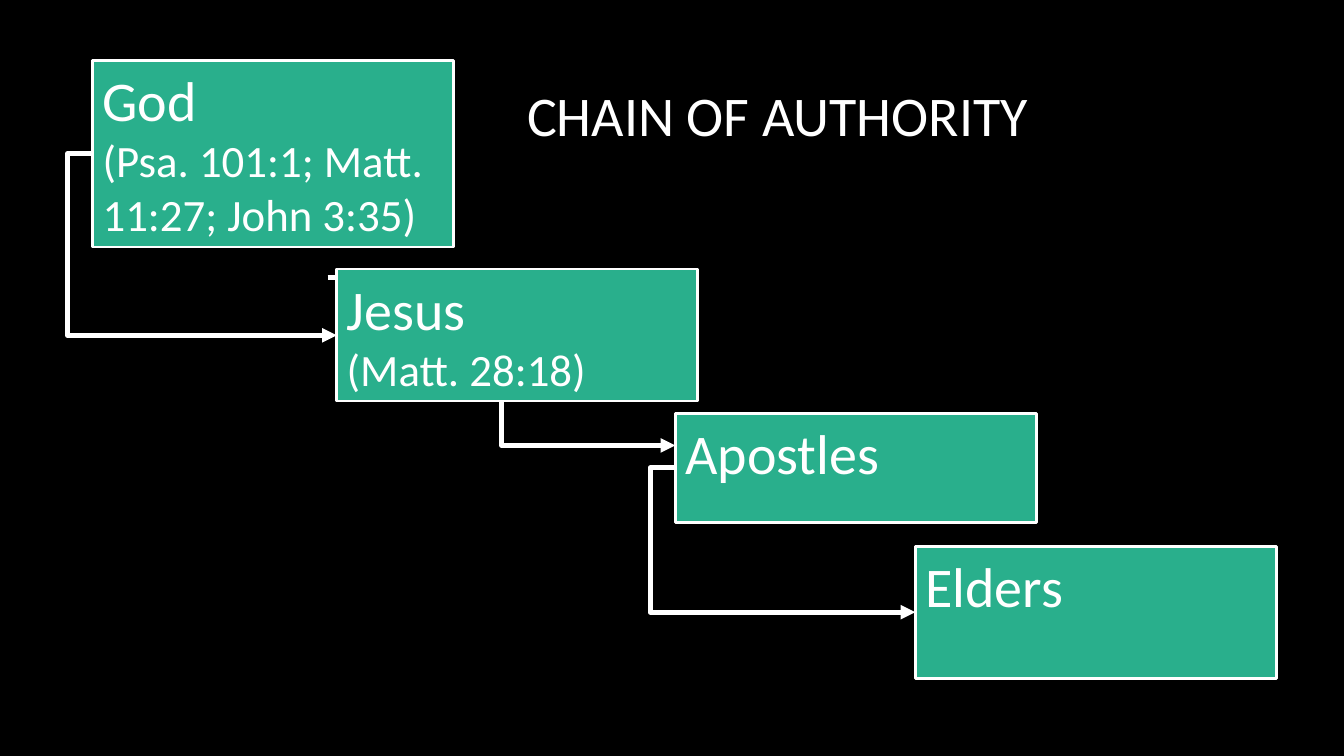
from lxml import etree
from pptx import Presentation
from pptx.dml.color import RGBColor
from pptx.enum.shapes import MSO_CONNECTOR as Connector, MSO_SHAPE as Shape
from pptx.enum.text import MSO_ANCHOR as Anchor, PP_ALIGN as Align
from pptx.oxml.ns import qn
from pptx.util import Pt

COLORS = {"background": "000000", "box": "29AF8C", "white": "FFFFFF"}
FONT = "Calibri"
NAME_SIZE, VERSE_SIZE = 40, 32
BOX_WIDTH = 257.8
BOX_LINE, ARROW_LINE = 2, 3.5

TITLE = ("CHAIN OF AUTHORITY", 369.4, 54, 437.8, 55.4)
# name: (verses, left, top, height)
LINKS = {
    "God": ("(Psa. 101:1; Matt. 11:27; John 3:35)", 66.2, 43.2, 133.2),
    "Apostles": ("", 482.4, 295.2, 77.8),
    "Elders": ("", 653.8, 390.2, 94.3),
    "Jesus": ("(Matt. 28:18)", 240.5, 192.2, 94.3),
}
# (start x, start y, end x, end y, x of the vertical run)
ARROWS = [
    (66.2, 109.7, 240.5, 239.5, 48.2),
    (234, 198, 482.4, 318.2, 358.2),
    (482.4, 334.1, 653.8, 437.3, 464.4),
]


def rgb(name):
    return RGBColor.from_string(COLORS[name])


def write(frame, lines):
    """Fill a frame with (text, size) paragraphs, left and top aligned."""
    settings = {"word_wrap": True, "vertical_anchor": Anchor.TOP}
    for key, value in settings.items():
        setattr(frame, key, value)
    for index, (text, size) in enumerate(lines):
        paragraph = frame.add_paragraph() if index else frame.paragraphs[0]
        paragraph.alignment = Align.LEFT
        run = paragraph.add_run()
        run.text = text
        for key, value in {"name": FONT, "size": Pt(size)}.items():
            setattr(run.font, key, value)
        run.font.color.rgb = rgb("white")


def add_title(slide):
    text, *bounds = TITLE
    box = slide.shapes.add_textbox(*map(Pt, bounds))
    write(box.text_frame, [(text, NAME_SIZE)])


def add_link(slide, name):
    verses, left, top, height = LINKS[name]
    box = slide.shapes.add_shape(
        Shape.RECTANGLE, Pt(left), Pt(top), Pt(BOX_WIDTH), Pt(height))
    box.shadow.inherit = False
    box.fill.solid()
    box.fill.fore_color.rgb = rgb("box")
    box.line.color.rgb = rgb("white")
    box.line.width = Pt(BOX_LINE)
    lines = [(name, NAME_SIZE), (verses, VERSE_SIZE)]
    write(box.text_frame, [line for line in lines if line[0]])


def add_arrow(slide, x1, y1, x2, y2, turn_x):
    """Draw an elbow arrow whose vertical run lies at turn_x."""
    arrow = slide.shapes.add_connector(
        Connector.ELBOW, Pt(x1), Pt(y1), Pt(x2), Pt(y2))
    arrow.line.color.rgb = rgb("white")
    arrow.line.width = Pt(ARROW_LINE)
    properties = arrow._element.spPr
    bend = round((turn_x - x1) / (x2 - x1) * 100000)
    etree.SubElement(properties.find(".//" + qn("a:avLst")), qn("a:gd"),
                     name="adj1", fmla=f"val {bend}")
    etree.SubElement(properties.find(qn("a:ln")), qn("a:tailEnd"),
                     type="triangle")
    etree.SubElement(properties, qn("a:effectLst"))


def main():
    deck = Presentation()
    deck.slide_width, deck.slide_height = Pt(960), Pt(540)
    slide = deck.slides.add_slide(deck.slide_layouts[6])
    slide.background.fill.solid()
    slide.background.fill.fore_color.rgb = rgb("background")

    add_title(slide)
    for name in ("God", "Apostles", "Elders"):
        add_link(slide, name)
    for arrow in ARROWS:
        add_arrow(slide, *arrow)
    add_link(slide, "Jesus")  # covers the start of the second arrow
    deck.save("out.pptx")


if __name__ == "__main__":
    main()
